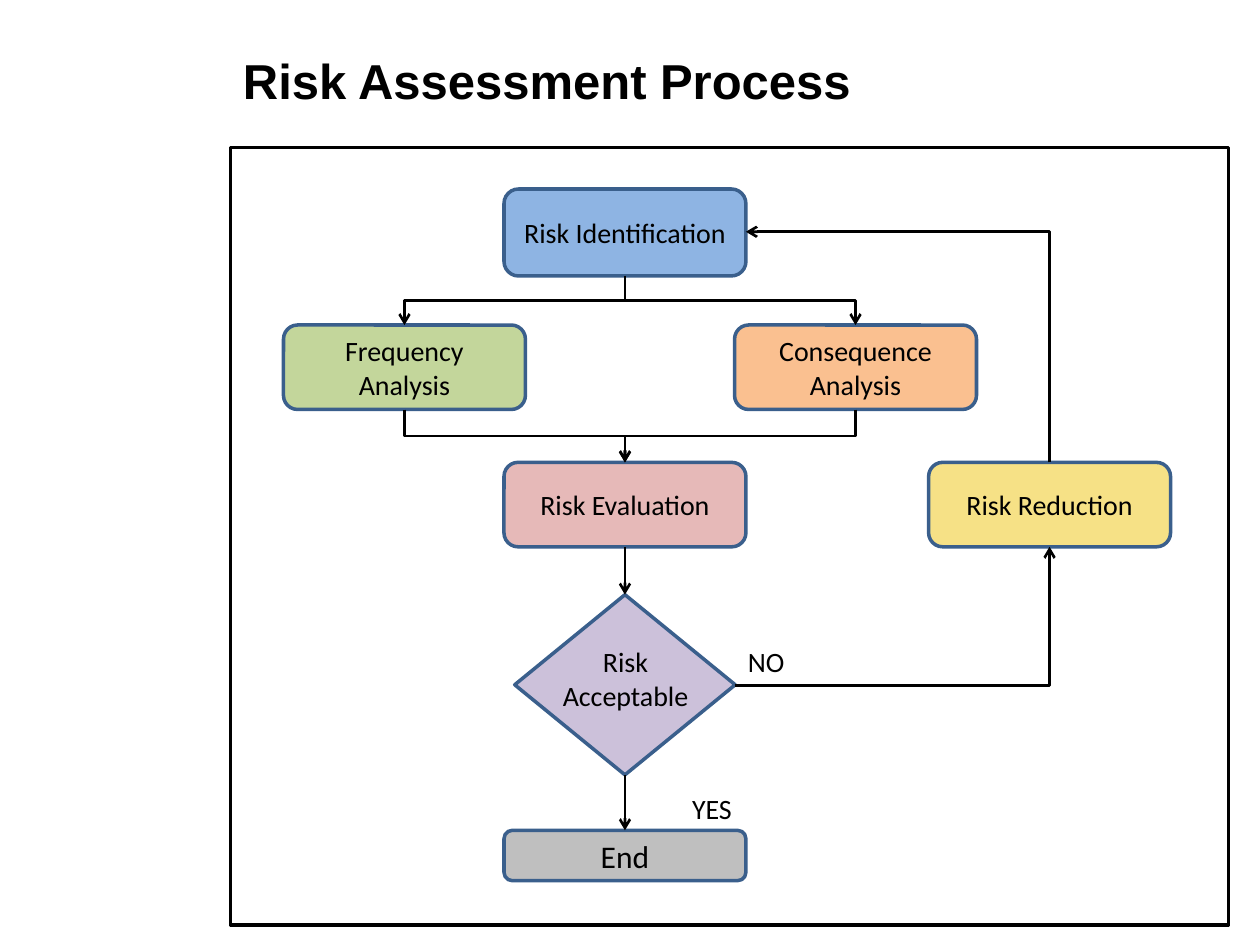
from lxml import etree
from pptx import Presentation
from pptx.dml.color import RGBColor
from pptx.enum.shapes import MSO_CONNECTOR, MSO_SHAPE
from pptx.enum.text import MSO_ANCHOR, PP_ALIGN
from pptx.oxml.ns import qn
from pptx.util import Inches, Pt

STRAIGHT, ELBOW = MSO_CONNECTOR.STRAIGHT, MSO_CONNECTOR.ELBOW
PROCESS, DIAMOND = MSO_SHAPE.FLOWCHART_ALTERNATE_PROCESS, MSO_SHAPE.DIAMOND
RECTANGLE = MSO_SHAPE.RECTANGLE
MIDDLE, CENTER = MSO_ANCHOR.MIDDLE, PP_ALIGN.CENTER

BLACK = RGBColor(0x00, 0x00, 0x00)
OUTLINE = RGBColor(0x3A, 0x5F, 0x8C)
BLUE = RGBColor(0x8E, 0xB4, 0xE3)
GREEN = RGBColor(0xC3, 0xD6, 0x9B)
ORANGE = RGBColor(0xFA, 0xC0, 0x90)
PINK = RGBColor(0xE6, 0xB9, 0xB8)
YELLOW = RGBColor(0xF6, 0xE1, 0x86)
GRAY = RGBColor(0xBF, 0xBF, 0xBF)
PURPLE = RGBColor(0xCC, 0xC1, 0xDA)


def write(sp, lines, size, font="Calibri", bold=False, align=CENTER):
    tf = sp.text_frame
    tf.text = "\n".join(lines)
    for p in tf.paragraphs:
        p.alignment = align
        p.font.name = font
        p.font.size = Pt(size)
        p.font.bold = bold
        p.font.color.rgb = BLACK
    return tf


def connect(x1, y1, x2, y2, preset=None, turn=0):
    cx, cy = (x1 + x2) / 2, (y1 + y2) / 2
    dx, dy = (x2 - x1) / 2, (y2 - y1) / 2
    if turn == 90:
        dx, dy = dy, -dx
    elif turn == 270:
        dx, dy = -dy, dx
    ends = [Inches(v) for v in (cx - dx, cy - dy, cx + dx, cy + dy)]
    cxn = s.shapes.add_connector(ELBOW if preset else STRAIGHT, *ends)
    cxn.line.color.rgb = BLACK
    cxn.line.width = Pt(1.5)
    sp_pr = cxn._element.spPr
    if preset:
        sp_pr.find(qn("a:prstGeom")).set("prst", preset)
    if turn:
        sp_pr.find(qn("a:xfrm")).set("rot", str(turn * 60000))
    etree.SubElement(sp_pr.find(qn("a:ln")), qn("a:tailEnd"), type="arrow")
    etree.SubElement(sp_pr, qn("a:effectLst"))


prs = Presentation()
prs.slide_width, prs.slide_height = Inches(10), Inches(7.5)
s = prs.slides.add_slide(prs.slide_layouts[6])

title = s.shapes.add_textbox(Inches(1.83), Inches(0.3), Inches(7.92), Inches(0.78))
tf = write(title, ["Risk Assessment Process"], 28, "Arial", True, PP_ALIGN.LEFT)
tf.word_wrap = True
tf.margin_top = Inches(0.1)

MAIN_X, FREQ_X, CONS_X, REDUCE_X = 4.96, 3.21, 6.79, 8.33
BOX_W = 1.92
nodes = [
    (PROCESS, MAIN_X, 1.5, BOX_W, 0.69, BLUE, "Risk Identification", 16),
    (PROCESS, FREQ_X, 2.58, BOX_W, 0.67, GREEN, "Frequency Analysis", 16),
    (PROCESS, CONS_X, 2.58, BOX_W, 0.67, ORANGE, "Consequence Analysis", 16),
    (PROCESS, MAIN_X, 3.67, BOX_W, 0.67, PINK, "Risk Evaluation", 16),
    (PROCESS, REDUCE_X, 3.67, BOX_W, 0.67, YELLOW, "Risk Reduction", 16),
    (PROCESS, MAIN_X, 6.59, BOX_W, 0.4, GRAY, "End", 18),
    (DIAMOND, MAIN_X, 4.72, 1.75, 1.43, PURPLE, "", 16),
]
for kind, center, top, width, height, color, label, size in nodes:
    sp = s.shapes.add_shape(kind, Inches(center - width / 2), Inches(top),
                            Inches(width), Inches(height))
    sp.shadow.inherit = False
    sp.fill.solid()
    sp.fill.fore_color.rgb = color
    sp.line.color.rgb = OUTLINE
    sp.line.width = Pt(2)
    if label:
        tf = write(sp, [label], size)
        tf.word_wrap = True
        tf.vertical_anchor = MIDDLE

for x, turn_out, turn_in in ((CONS_X, 270, 90), (FREQ_X, 90, 270)):
    connect(MAIN_X, 2.19, x, 2.58, "bentConnector3", turn_out)
    connect(x, 3.25, MAIN_X, 3.67, "bentConnector3", turn_in)
connect(MAIN_X, 4.34, MAIN_X, 4.72)
connect(MAIN_X, 6.15, MAIN_X, 6.59)
connect(REDUCE_X, 3.67, MAIN_X + BOX_W / 2, 1.84, "bentConnector2", 270)
connect(5.83, 5.44, REDUCE_X, 4.34, "bentConnector2")

for left, top, width, height, lines in (
    (4.36, 5.07, 1.21, 0.64, ["Risk", "Acceptable"]),
    (5.39, 6.23, 0.52, 0.37, ["YES"]),
    (5.83, 5.07, 0.5, 0.37, ["NO"]),
):
    box = s.shapes.add_textbox(Inches(left), Inches(top), Inches(width), Inches(height))
    write(box, lines, 16).word_wrap = False

frame = s.shapes.add_shape(RECTANGLE, Inches(1.83), Inches(1.17), Inches(7.92), Inches(6.17))
frame.shadow.inherit = False
frame.fill.background()
frame.line.color.rgb = BLACK
frame.line.width = Pt(2)

prs.save("out.pptx")
